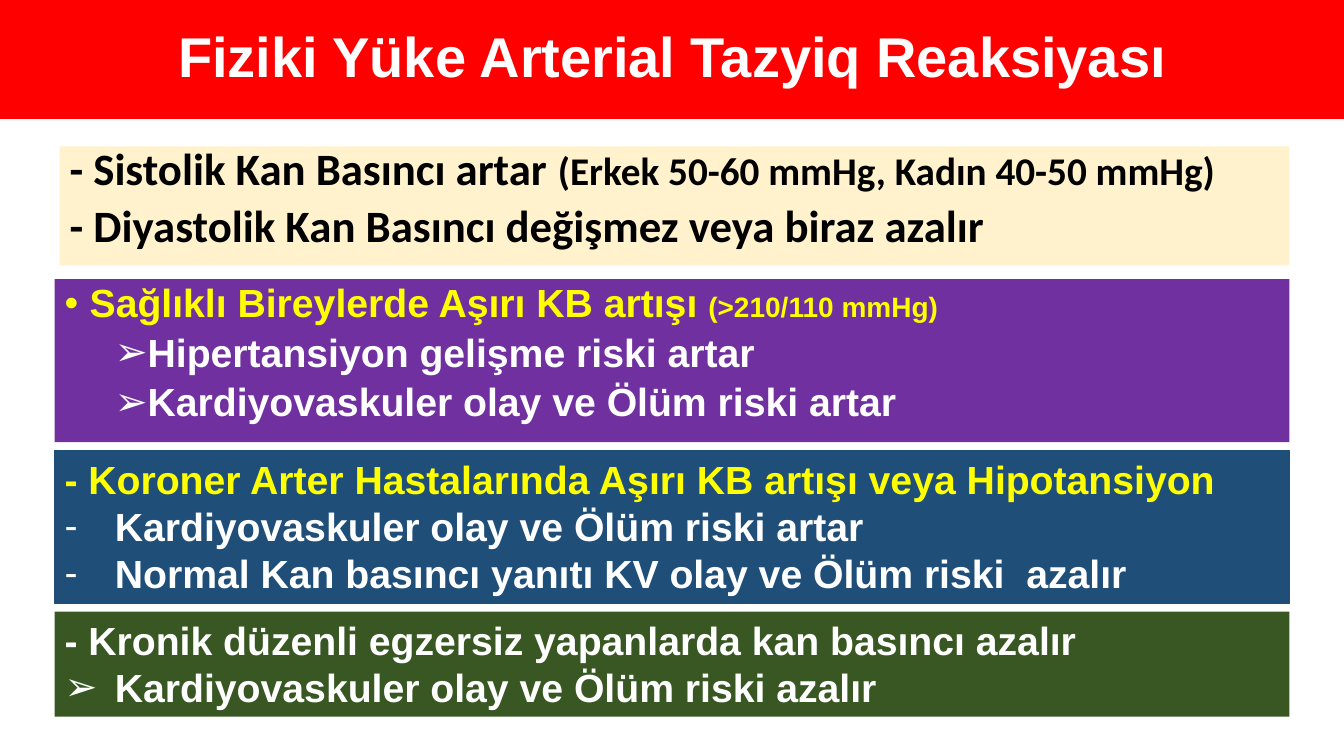
from lxml import etree
from pptx import Presentation
from pptx.dml.color import RGBColor
from pptx.enum import shapes, text
from pptx.oxml import ns
from pptx.util import Pt

WHITE, YELLOW, BLACK = "FFFFFF", "FFFF00", "000000"
RED, CREAM, PURPLE, BLUE, GREEN = "FF0000", "FFF2CC", "7030A0", "1F4E79", "385723"
TITLE_ONLY = 5


def color(hex_string):
    return RGBColor.from_string(hex_string)


def fill_shape(shape, fill):
    shape.fill.solid()
    shape.fill.fore_color.rgb = color(fill)


def add_run(paragraph, words, size, ink, font="Arial"):
    run = paragraph.add_run()
    run.text = words
    run.font.name = font
    run.font.size = Pt(size)
    run.font.bold = True
    run.font.color.rgb = color(ink)


def set_bullet(paragraph, character, margin, hanging):
    properties = paragraph._p.get_or_add_pPr()
    properties.set("marL", str(Pt(margin)))
    properties.set("indent", str(-Pt(hanging)))
    font = etree.SubElement(properties, ns.qn("a:buFont"))
    font.set("typeface", "Arial")
    bullet = etree.SubElement(properties, ns.qn("a:buChar"))
    bullet.set("char", character)


def add_title(slide, box, words):
    title = slide.shapes.title
    title.left, title.top, title.width, title.height = map(Pt, box)
    fill_shape(title, RED)
    frame = title.text_frame
    frame.vertical_anchor = text.MSO_ANCHOR.MIDDLE
    paragraph = frame.paragraphs[0]
    paragraph.alignment = text.PP_ALIGN.CENTER
    paragraph.line_spacing = 0.9
    add_run(paragraph, words, 40, WHITE)


def add_panel(slide, box, fill, count):
    """Add a filled box and return its count left-aligned paragraphs."""
    panel = slide.shapes.add_shape(shapes.MSO_SHAPE.RECTANGLE, *map(Pt, box))
    panel.shadow.inherit = False
    fill_shape(panel, fill)
    panel.line.fill.background()
    frame = panel.text_frame
    frame.word_wrap = True
    frame.vertical_anchor = text.MSO_ANCHOR.TOP
    for _ in range(count - 1):
        frame.add_paragraph()
    for paragraph in frame.paragraphs:
        paragraph.alignment = text.PP_ALIGN.LEFT
    return panel, frame.paragraphs


def add_normal_response(slide, box):
    _, paragraphs = add_panel(slide, box, CREAM, 2)
    for paragraph in paragraphs:
        paragraph.line_spacing = 0.8
        paragraph.space_before = Pt(10)
    systolic, diastolic = paragraphs
    add_run(systolic, "- Sistolik Kan Basıncı artar ", 32, BLACK, "Calibri")
    add_run(systolic, "(Erkek 50-60 mmHg, Kadın 40-50 mmHg)", 28, BLACK, "Calibri")
    add_run(diastolic, "- Diyastolik Kan Basıncı değişmez veya biraz azalır",
            32, BLACK, "Calibri")


def add_healthy_people(slide, box):
    risks = ["Hipertansiyon gelişme riski artar",
             "Kardiyovaskuler olay ve Ölüm riski artar"]
    _, (heading, *items) = add_panel(slide, box, PURPLE, 1 + len(risks))
    heading.line_spacing = 0.9
    heading.space_before = Pt(10)
    set_bullet(heading, "•", 18, 18)
    add_run(heading, "Sağlıklı Bireylerde Aşırı KB artışı ", 28, YELLOW)
    add_run(heading, "(>210/110 mmHg)", 20, YELLOW)
    for item, risk in zip(items, risks):
        item.level = 1
        item.line_spacing = 0.9
        item.space_before = Pt(5)
        set_bullet(item, "➢", 54, 18)
        add_run(item, risk, 28, WHITE)


def add_outcomes(slide, box, fill, heading_text, heading_ink, bullet, outcomes):
    panel, (heading, *items) = add_panel(slide, box, fill, 1 + len(outcomes))
    add_run(heading, heading_text, 28, heading_ink)
    for item, outcome in zip(items, outcomes):
        set_bullet(item, bullet, 36, 36)
        add_run(item, outcome, 28, WHITE)
    return panel


def build_slide(presentation):
    slide = presentation.slides.add_slide(presentation.slide_layouts[TITLE_ONLY])
    left, width = 39, 882
    add_title(slide, (0, 0, 960, 85), "Fiziki Yüke Arterial Tazyiq Reaksiyası")
    add_healthy_people(slide, (left, 199.4, width, 116.4))
    add_outcomes(slide, (left, 437, width, 75), GREEN,
                 "- Kronik düzenli egzersiz yapanlarda kan basıncı azalır", WHITE,
                 "➢", ["Kardiyovaskuler olay ve Ölüm riski azalır"])
    coronary = add_outcomes(
        slide, (left, 321.8, width, 109), BLUE,
        "- Koroner Arter Hastalarında Aşırı KB artışı veya Hipotansiyon", YELLOW,
        "-", ["Kardiyovaskuler olay ve Ölüm riski artar",
              "Normal Kan basıncı yanıtı KV olay ve Ölüm riski  azalır"])
    coronary.line.color.rgb = color(BLUE)
    coronary.line.width = Pt(0.75)
    add_normal_response(slide, (42.6, 104.6, 878.4, 85))


def main():
    presentation = Presentation()
    presentation.slide_width, presentation.slide_height = Pt(960), Pt(540)
    build_slide(presentation)
    presentation.save("out.pptx")


if __name__ == "__main__":
    main()
